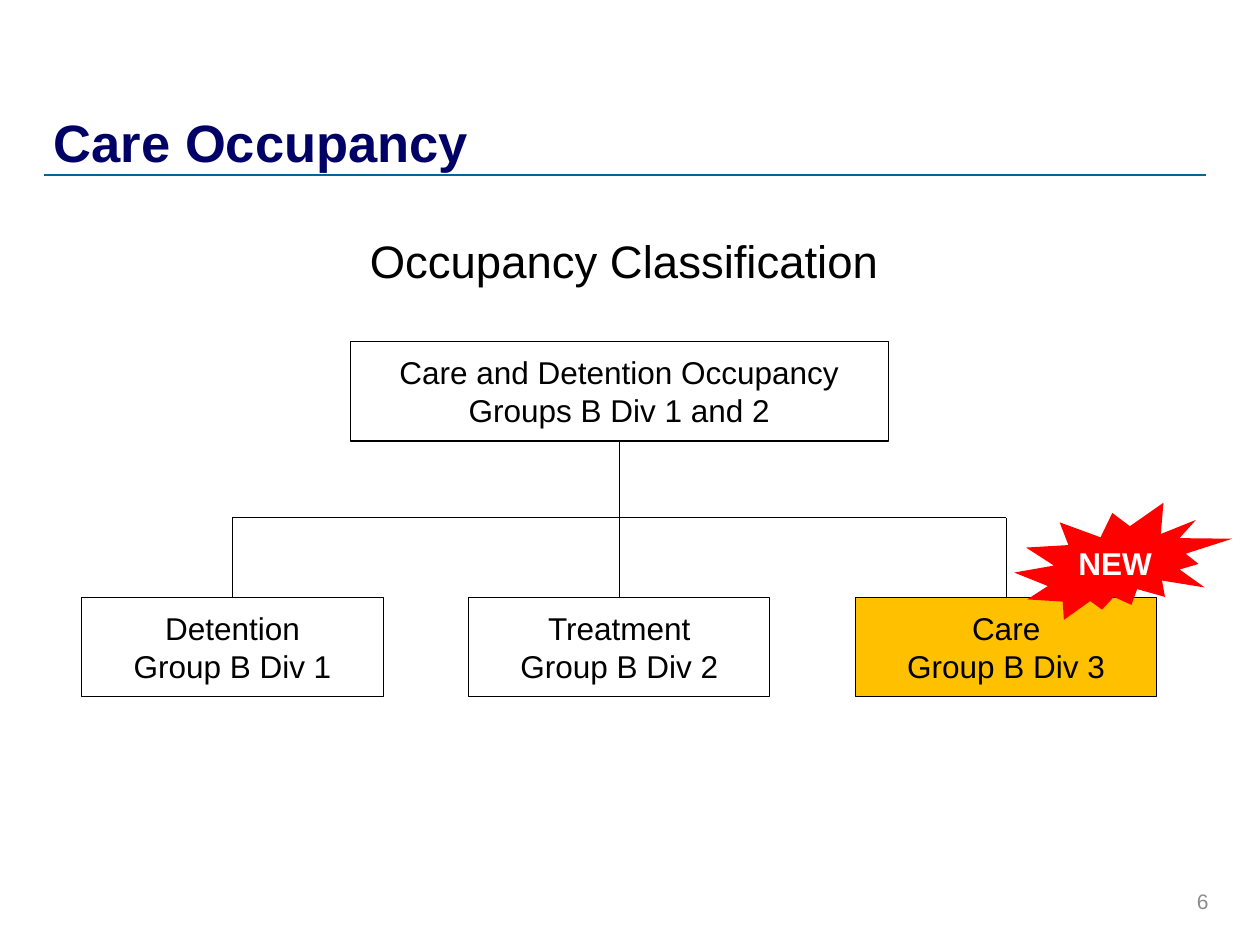
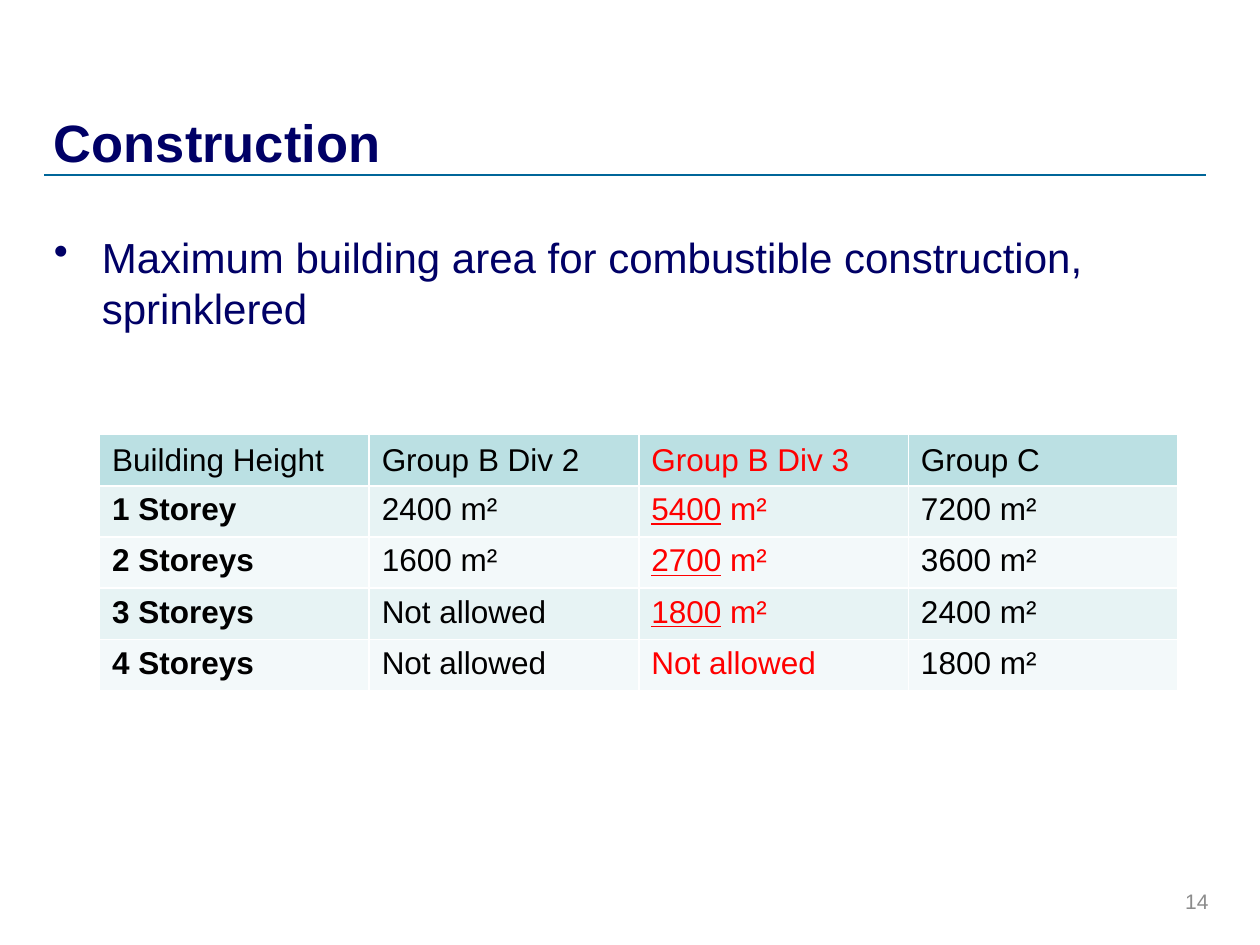
import pptx
import pptx.dml.color
import pptx.enum.shapes
import pptx.enum.text
import pptx.oxml
import pptx.oxml.ns
import pptx.util
from pptx.util import Inches

NAVY, RULE, GREY = "000066", "006699", "8C8C8C"
BLACK, WHITE, RED, AMBER = "000000", "FFFFFF", "FF0000", "FFC000"
HEADER_FILL, BAND_FILLS = "BBE0E3", ("E7F3F4", "F3F9FA")
SHAPES = pptx.enum.shapes.MSO_SHAPE
STRAIGHT = pptx.enum.shapes.MSO_CONNECTOR.STRAIGHT
ALIGN = pptx.enum.text.PP_ALIGN
ANCHOR = pptx.enum.text.MSO_ANCHOR
rgb = pptx.dml.color.RGBColor.from_string


def write(frame, text, size=18, color=BLACK, bold=False, underline=False,
          align=ALIGN.LEFT, anchor=ANCHOR.TOP, wrap=True):
    """Append text to the frame's first paragraph; a newline is a line break."""
    frame.word_wrap = wrap
    frame.vertical_anchor = anchor
    para = frame.paragraphs[0]
    para.alignment = align
    for index, line in enumerate(text.split("\n")):
        if index:
            para.add_line_break()
        span = para.add_run()
        span.text = line
        span.font.name = "Arial"
        span.font.size = pptx.util.Pt(size)
        span.font.bold = bold
        span.font.underline = underline
        span.font.color.rgb = rgb(color)
    return para


def draw_line(page, x1, y1, x2, y2, color=BLACK, width=0.5):
    line = page.shapes.add_connector(STRAIGHT, Inches(x1), Inches(y1), Inches(x2), Inches(y2))
    line.line.color.rgb = rgb(color)
    line.line.width = pptx.util.Pt(width)
    properties = line._element.spPr
    properties.append(properties.makeelement(pptx.oxml.ns.qn("a:effectLst"), {}))
    return line


deck = pptx.Presentation()
deck.slide_width, deck.slide_height = Inches(10), Inches(7.5)

# Shared page furniture
pages = []
for title, number in (("Care Occupancy", "6"), ("Construction", "14")):
    page = deck.slides.add_slide(deck.slide_layouts[6])
    number_box = page.shapes.add_textbox(Inches(7.36), Inches(6.95), Inches(2.33), Inches(0.4))
    write(number_box.text_frame, number, size=12, color=GREY, align=ALIGN.RIGHT,
          anchor=ANCHOR.MIDDLE)
    draw_line(page, 0.35, 1.39, 9.57, 1.39, color=RULE, width=1)
    title_box = page.shapes.add_textbox(Inches(0.33), Inches(0.28), Inches(7.74), Inches(1.14))
    write(title_box.text_frame, title, size=30, color=NAVY, bold=True, anchor=ANCHOR.BOTTOM)
    pages.append(page)
occupancy_page, construction_page = pages

# Occupancy tree
heading = occupancy_page.shapes.add_textbox(Inches(0.33), Inches(1.8), Inches(9.25), Inches(1))
write(heading.text_frame, "Occupancy Classification", size=26, align=ALIGN.CENTER)

box_height, group_width, group_step = 0.79, 2.39, 3.07
root_top, bus_y, group_top = 2.71, 4.11, 4.74
group_lefts = [0.65 + group_step * column for column in range(3)]
centers = [left + group_width / 2 for left in group_lefts]
root_width = 4.27
tree = [
    ("Care and Detention Occupancy\nGroups B Div 1 and 2",
     centers[1] - root_width / 2, root_top, root_width, None, 0.75),
    ("Detention\nGroup B Div 1", group_lefts[0], group_top, group_width, None, 0.5),
    ("Treatment\nGroup B Div 2", group_lefts[1], group_top, group_width, None, 0.5),
    ("Care\nGroup B Div 3", group_lefts[2], group_top, group_width, AMBER, 0.75),
]
boxes = []
for text, left, top, width, fill, outline in tree:
    box = occupancy_page.shapes.add_shape(SHAPES.RECTANGLE, Inches(left), Inches(top),
                                          Inches(width), Inches(box_height))
    box.shadow.inherit = False
    if fill:
        box.fill.solid()
        box.fill.fore_color.rgb = rgb(fill)
    else:
        box.fill.background()
    box.line.color.rgb = rgb(BLACK)
    box.line.width = pptx.util.Pt(outline)
    write(box.text_frame, text, align=ALIGN.CENTER, anchor=ANCHOR.MIDDLE)
    boxes.append(box)
root, detention, treatment, care = boxes

draw_line(occupancy_page, centers[0], bus_y, centers[2], bus_y)
for center, group in ((centers[0], detention), (centers[2], care)):
    drop = draw_line(occupancy_page, center, bus_y, center, group_top)
    drop.end_connect(group, 0)
trunk = draw_line(occupancy_page, centers[1], root_top + box_height, centers[1], group_top,
                  width=0.75)
trunk.begin_connect(root, 2)
trunk.end_connect(treatment, 0)

burst = occupancy_page.shapes.add_shape(SHAPES.EXPLOSION2, Inches(8.05), Inches(3.99),
                                        Inches(1.73), Inches(0.93))
burst.shadow.inherit = False
burst.fill.solid()
burst.fill.fore_color.rgb = rgb(RED)
burst.line.fill.background()
write(burst.text_frame, "NEW", color=WHITE, bold=True, align=ALIGN.CENTER,
      anchor=ANCHOR.MIDDLE, wrap=False)

# Building area limits
body = construction_page.shapes.add_textbox(Inches(0.33), Inches(1.79), Inches(9.25), Inches(1.2))
bullet = write(body.text_frame, "Maximum building area for combustible construction, sprinklered",
               size=24, color=NAVY)
bullet_format = bullet._p.get_or_add_pPr()
bullet_format.set("marL", str(Inches(0.38)))
bullet_format.set("indent", str(Inches(-0.38)))
bullet_format.append(bullet_format.makeelement(pptx.oxml.ns.qn("a:buChar"), {"char": "•"}))

area_rows = [
    ("Building Height", "Group B Div 2", "Group B Div 3", "Group C"),
    ("1 Storey", "2400 m²", "5400 m²", "7200 m²"),
    ("2 Storeys", "1600 m²", "2700 m²", "3600 m²"),
    ("3 Storeys", "Not allowed", "1800 m²", "2400 m²"),
    ("4 Storeys", "Not allowed", "Not allowed", "1800 m²"),
]
new_column = 2
table = construction_page.shapes.add_table(len(area_rows), 4, Inches(0.79), Inches(3.45),
                                           Inches(8.56), Inches(2.03)).table
for row_index, values in enumerate(area_rows):
    for column, value in enumerate(values):
        cell = table.cell(row_index, column)
        is_header = row_index == 0
        cell.fill.solid()
        cell.fill.fore_color.rgb = rgb(HEADER_FILL if is_header
                                       else BAND_FILLS[(row_index - 1) % 2])
        color = RED if column == new_column else BLACK
        bold = column == 0 and not is_header
        if column == new_column and value.endswith(" m²"):
            write(cell.text_frame, value.removesuffix(" m²"), color=color, underline=True)
            value = " m²"
        write(cell.text_frame, value, color=color, bold=bold)
        cell.vertical_anchor = ANCHOR.MIDDLE if is_header else ANCHOR.TOP
        for position, side in enumerate(("lnL", "lnR", "lnT", "lnB")):
            border = pptx.oxml.parse_xml(
                f'<a:{side} {pptx.oxml.ns.nsdecls("a")} w="{pptx.util.Pt(1)}"><a:solidFill>'
                f'<a:srgbClr val="{WHITE}"/></a:solidFill></a:{side}>')
            cell._tc.get_or_add_tcPr().insert(position, border)

deck.save("out.pptx")
